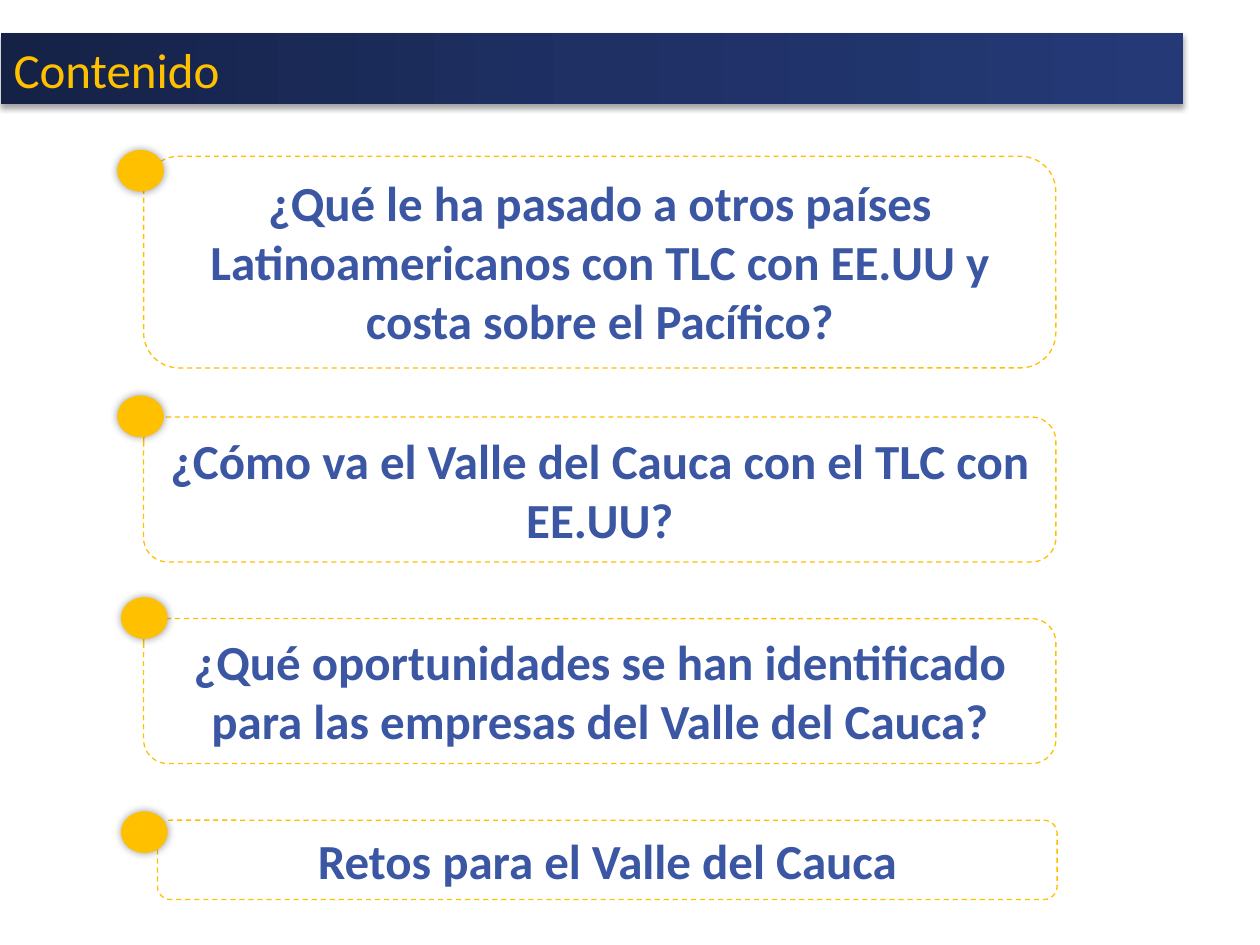
from copy import deepcopy
from dataclasses import dataclass

from lxml.etree import SubElement
from pptx import Presentation
from pptx.dml.color import RGBColor
from pptx.enum.dml import MSO_LINE
from pptx.enum.shapes import MSO_SHAPE
from pptx.enum.text import MSO_ANCHOR, MSO_AUTO_SIZE, PP_ALIGN
from pptx.oxml.ns import qn
from pptx.shapes.autoshape import Shape
from pptx.slide import Slide
from pptx.util import Inches, Pt

CELL = 0.1
COLUMNS, ROWS = 100, 75
GOLD = RGBColor(0xFF, 0xC0, 0x00)
BLUE = RGBColor(0x3B, 0x56, 0xA3)
BLACK = RGBColor(0x00, 0x00, 0x00)
BANNER_COLORS = (
    RGBColor(0x15, 0x22, 0x46),
    RGBColor(0x1E, 0x30, 0x64),
    RGBColor(0x24, 0x39, 0x76),
)


@dataclass(frozen=True)
class Area:
    column: float
    row: float
    columns: float
    rows: float


@dataclass(frozen=True)
class Topic:
    text: str
    box: Area
    bullet_column: float
    bullet_row: float


@dataclass(frozen=True)
class Shadow:
    opacity: int
    blur: float
    distance: float
    angle: int


BANNER = Area(0.1, 2.6, 93.8, 5.7)
BANNER_SHADOW = Shadow(35, 3, 2, 90)
BULLET_SHADOW = Shadow(40, 5, 0, 0)
TOPICS = (
    Topic(
        "¿Qué le ha pasado a otros países Latinoamericanos con TLC con EE.UU y costa sobre el Pacífico?",
        Area(11.4, 12.4, 72.4, 16.8), 9.4, 12,
    ),
    Topic(
        "¿Cómo va el Valle del Cauca con el TLC con EE.UU?",
        Area(11.4, 33.1, 72.4, 11.5), 9.4, 31.5,
    ),
    Topic(
        "¿Qué oportunidades se han identificado para las empresas del Valle del Cauca?",
        Area(11.4, 49.1, 72.4, 11.5), 9.7, 47.5,
    ),
    Topic(
        "Retos para el Valle del Cauca",
        Area(12.5, 65.1, 71.4, 6.3), 9.7, 64.5,
    ),
)


def add_area(slide: Slide, kind: MSO_SHAPE, area: Area) -> Shape:
    lengths = (area.column, area.row, area.columns, area.rows)
    shape = slide.shapes.add_shape(kind, *(Inches(length * CELL) for length in lengths))
    shape.shadow.inherit = False
    return shape


def write(shape: Shape, text: str, color: RGBColor, bold: bool,
          alignment: PP_ALIGN, anchor: MSO_ANCHOR) -> None:
    frame = shape.text_frame
    frame.text = text
    frame.word_wrap = True
    frame.vertical_anchor = anchor
    paragraph = frame.paragraphs[0]
    paragraph.alignment = alignment
    font = paragraph.runs[0].font
    font.name = "Calibri"
    font.size = Pt(28)
    font.bold = bold
    font.color.rgb = color


def cast_shadow(shape: Shape, shadow: Shadow) -> None:
    effects = shape.element.spPr.find(qn("a:effectLst"))
    outer = SubElement(
        effects, qn("a:outerShdw"), blurRad=str(Pt(shadow.blur)),
        dist=str(Pt(shadow.distance)), dir=str(shadow.angle * 60000), rotWithShape="0",
    )
    color = SubElement(outer, qn("a:srgbClr"), val=str(BLACK))
    SubElement(color, qn("a:alpha"), val=str(shadow.opacity * 1000))


def add_banner(slide: Slide, text: str) -> None:
    banner = add_area(slide, MSO_SHAPE.RECTANGLE, BANNER)
    banner.line.fill.background()
    fill = banner.fill
    fill.gradient()
    fill.gradient_angle = 0
    stop_list = banner.element.spPr.find(qn("a:gradFill")).find(qn("a:gsLst"))
    stop_list.insert(1, deepcopy(stop_list[0]))
    for index, (stop, color) in enumerate(zip(fill.gradient_stops, BANNER_COLORS)):
        stop.position = index / 2
        stop.color.rgb = color
    cast_shadow(banner, BANNER_SHADOW)
    write(banner, text, GOLD, False, PP_ALIGN.LEFT, MSO_ANCHOR.MIDDLE)


def add_topic_box(slide: Slide, topic: Topic) -> None:
    box = add_area(slide, MSO_SHAPE.ROUNDED_RECTANGLE, topic.box)
    box.fill.background()
    box.line.color.rgb = GOLD
    box.line.width = Pt(0.75)
    box.line.dash_style = MSO_LINE.DASH
    write(box, topic.text, BLUE, True, PP_ALIGN.CENTER, MSO_ANCHOR.TOP)
    box.text_frame.auto_size = MSO_AUTO_SIZE.SHAPE_TO_FIT_TEXT


def add_bullet(slide: Slide, topic: Topic) -> None:
    area = Area(topic.bullet_column, topic.bullet_row, 3.5, 3.1)
    bullet = add_area(slide, MSO_SHAPE.OVAL, area)
    bullet.fill.solid()
    bullet.fill.fore_color.rgb = GOLD
    bullet.line.color.rgb = GOLD
    bullet.line.width = Pt(1.5)
    cast_shadow(bullet, BULLET_SHADOW)


def main() -> None:
    presentation = Presentation()
    presentation.slide_width = Inches(COLUMNS * CELL)
    presentation.slide_height = Inches(ROWS * CELL)
    slide = presentation.slides.add_slide(presentation.slide_layouts[6])
    for topic in TOPICS:
        add_topic_box(slide, topic)
    add_banner(slide, "Contenido")
    for topic in TOPICS:
        add_bullet(slide, topic)
    presentation.save("out.pptx")


if __name__ == "__main__":
    main()
